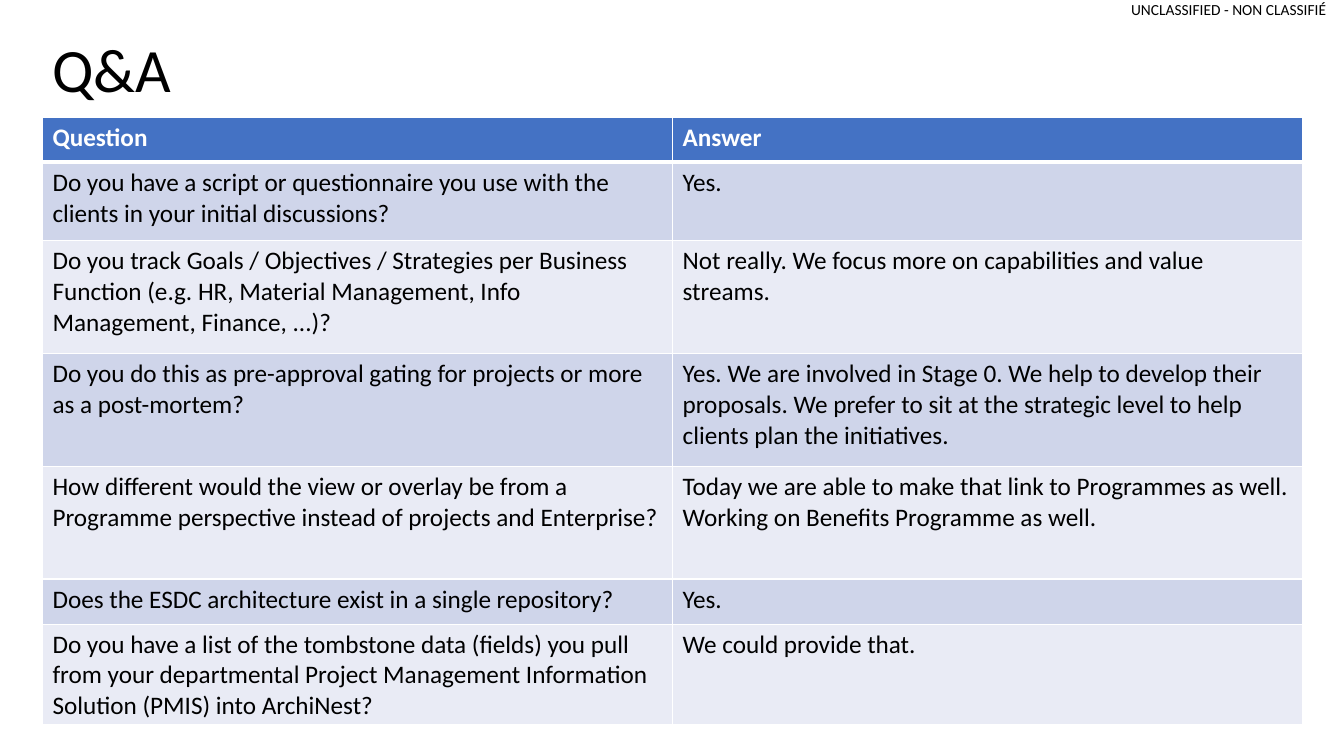
"""Builds a Q&A slide with a table of questions and answers."""
from lxml import etree
from pptx import Presentation
from pptx.dml.color import RGBColor
from pptx.enum.text import MSO_ANCHOR, PP_ALIGN
from pptx.oxml.ns import qn
from pptx.util import Cm, Pt

LEFT, RIGHT = PP_ALIGN.LEFT, PP_ALIGN.RIGHT
TOP, MIDDLE = MSO_ANCHOR.TOP, MSO_ANCHOR.MIDDLE

MARKING = "UNCLASSIFIED - NON CLASSIFIÉ"
TITLE = "Q&A"
QUESTIONS_AND_ANSWERS = [
    ("Question", "Answer"),
    ("Do you have a script or questionnaire you use with the clients in your "
     "initial discussions?",
     "Yes."),
    ("Do you track Goals / Objectives / Strategies per Business Function (e.g. HR, "
     "Material Management, Info Management, Finance, ...)?",
     "Not really. We focus more on capabilities and value streams."),
    ("Do you do this as pre-approval gating for projects or more as a post-mortem?",
     "Yes. We are involved in Stage 0. We help to develop their proposals. We prefer "
     "to sit at the strategic level to help clients plan the initiatives."),
    ("How different would the view or overlay be from a Programme perspective "
     "instead of projects and Enterprise?",
     "Today we are able to make that link to Programmes as well. Working on Benefits "
     "Programme as well."),
    ("Does the ESDC architecture exist in a single repository?", "Yes."),
    ("Do you have a list of the tombstone data (fields) you pull from your "
     "departmental Project Management Information Solution (PMIS) into ArchiNest?",
     "We could provide that."),
]
ROW_HEIGHTS = [1.14, 1.98, 2.84, 2.84, 2.84, 1.14, 1.98]
COLUMN_WIDTH = 15.88
MARGIN_LEFT = 1.07
TABLE_TOP = 2.95

FONT = "Calibri"
COLOURS = {"text": "000000", "white": "FFFFFF", "header": "4472C4",
           "odd": "CFD5EA", "even": "E9EBF5"}


def colour(name):
    return RGBColor.from_string(COLOURS[name])


def style_text(frame, size, colour_name="text", bold=False, align=LEFT):
    for paragraph in frame.paragraphs:
        paragraph.alignment = align
        for run in paragraph.runs:
            run.font.name = FONT
            run.font.size = Pt(size)
            run.font.bold = bold
            run.font.color.rgb = colour(colour_name)


def add_label(slide, text, left, top, width, height, size, anchor=TOP, align=LEFT):
    frame = slide.shapes.add_textbox(Cm(left), Cm(top), Cm(width), Cm(height)).text_frame
    frame.word_wrap = True
    frame.vertical_anchor = anchor
    frame.text = text
    style_text(frame, size, align=align)
    return frame


def add_borders(cell, bottom_width, top_width):
    properties = cell._tc.get_or_add_tcPr()
    widths = {"a:lnL": 1, "a:lnR": 1, "a:lnT": top_width, "a:lnB": bottom_width}
    for side, width in widths.items():
        line = etree.SubElement(properties, qn(side), w=str(Pt(width)))
        fill = etree.SubElement(line, qn("a:solidFill"))
        etree.SubElement(fill, qn("a:srgbClr"), val=COLOURS["white"])


def add_questions_table(slide):
    table = slide.shapes.add_table(
        len(QUESTIONS_AND_ANSWERS), 2, Cm(MARGIN_LEFT), Cm(TABLE_TOP),
        Cm(2 * COLUMN_WIDTH), Cm(sum(ROW_HEIGHTS))).table
    for column in table.columns:
        column.width = Cm(COLUMN_WIDTH)
    for index, (texts, height) in enumerate(zip(QUESTIONS_AND_ANSWERS, ROW_HEIGHTS)):
        is_header = index == 0
        band = "header" if is_header else ("odd" if index % 2 else "even")
        table.rows[index].height = Cm(height)
        for cell, text in zip(table.rows[index].cells, texts):
            cell.text = text
            style_text(cell.text_frame, 18, "white" if is_header else "text", is_header)
            add_borders(cell, 3 if is_header else 1, 3 if index == 1 else 1)
            cell.fill.solid()
            cell.fill.fore_color.rgb = colour(band)


def main():
    presentation = Presentation()
    presentation.slide_width, presentation.slide_height = Cm(33.87), Cm(19.05)
    slide = presentation.slides.add_slide(presentation.slide_layouts[6])

    marking = add_label(slide, MARKING, 28.45, 0, 4.98, 0.46, 11, align=RIGHT)
    marking.margin_left = marking.margin_right = 0
    marking.margin_top = marking.margin_bottom = 0
    marking.word_wrap = False

    title = add_label(slide, TITLE, MARGIN_LEFT, 0, 29.21, 3.68, 44, anchor=MIDDLE)
    title.paragraphs[0].line_spacing = 0.9

    add_questions_table(slide)
    presentation.save("out.pptx")


if __name__ == "__main__":
    main()
